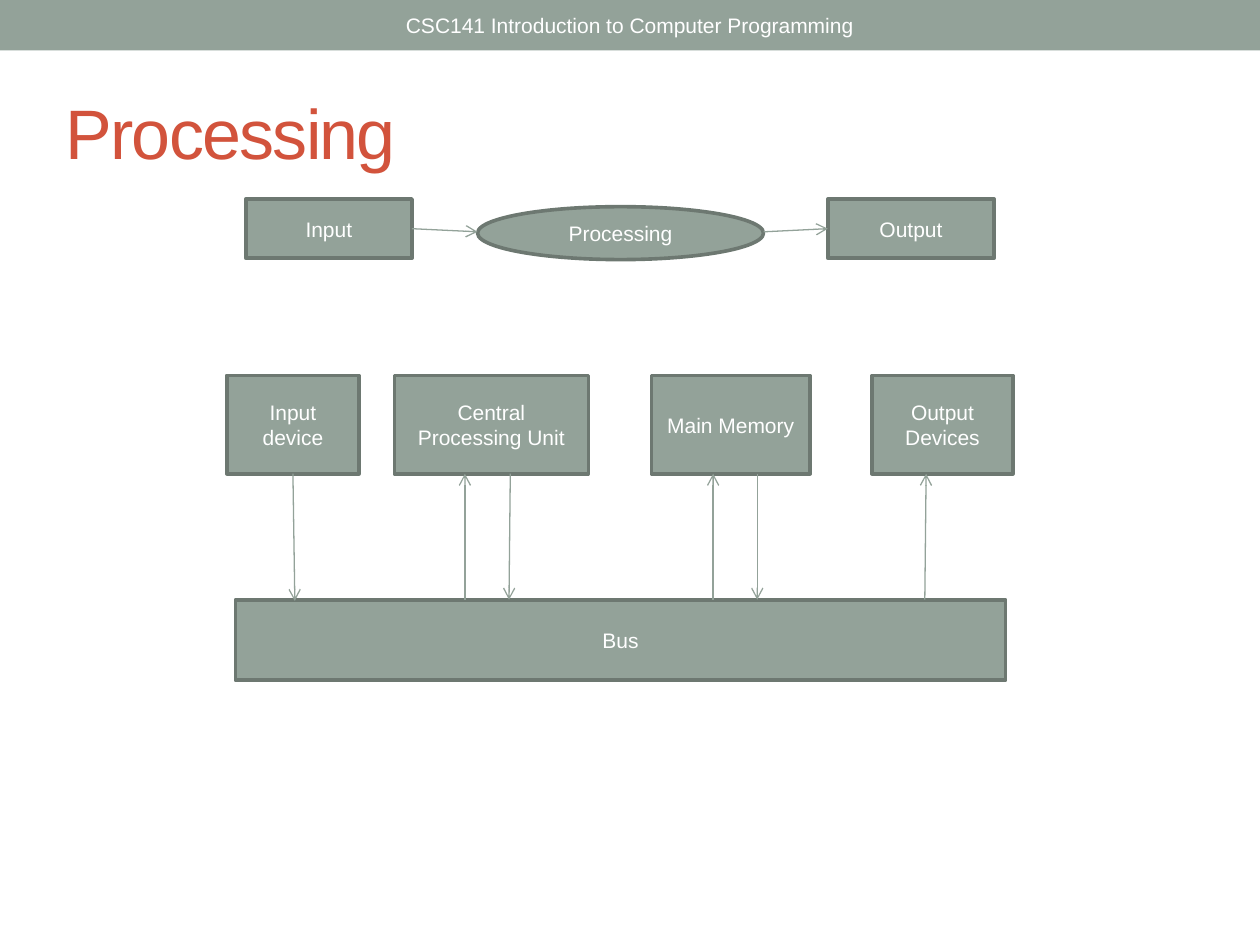
from dataclasses import dataclass
from typing import Optional

from lxml import etree
from pptx import Presentation, util as u
from pptx.dml.color import RGBColor
from pptx.enum import shapes as kinds, text as txt
from pptx.oxml import ns


@dataclass(frozen=True)
class Theme:
    font: str = "Arial"
    fill: str = "93A299"
    edge: str = "6D7871"
    title: str = "D2533C"
    light: str = "FFFFFF"
    head: int = 40
    body: int = 12
    rim: float = 2.08
    thin: float = 0.75


@dataclass(frozen=True)
class Node:
    label: str
    left: float
    top: float
    width: float
    height: float
    oval: bool = False


@dataclass(frozen=True)
class Arrow:
    start: tuple[float, float]
    end: tuple[float, float]
    source: Optional[tuple[str, int]] = None  # node label, side
    target: Optional[tuple[str, int]] = None


LOOK = Theme()
TOP, LEFT, BOTTOM, RIGHT = range(4)

# Flow from input to output
FLOW = [
    Node("Input", 1.95, 1.58, 1.32, 0.47),
    Node("Processing", 3.79, 1.64, 2.27, 0.42, oval=True),
    Node("Output", 6.57, 1.58, 1.32, 0.47),
]
FLOW_ARROWS = [
    Arrow((3.27, 1.82), (3.79, 1.84), source=("Input", RIGHT)),
    Arrow((6.06, 1.84), (6.57, 1.82), target=("Output", LEFT)),
]

# Hardware parts on a shared bus
UNIT_TOP, UNIT_HIGH, BUS_TOP = 2.98, 0.78, 4.76
UNIT_END = UNIT_TOP + UNIT_HIGH
UNITS = [
    Node(label, left, UNIT_TOP, width, UNIT_HIGH)
    for label, left, width in [
        ("Input device", 1.8, 1.05),
        ("Central Processing Unit", 3.13, 1.54),
        ("Main Memory", 5.17, 1.26),
        ("Output Devices", 6.92, 1.12),
    ]
]
BUS = Node("Bus", 1.87, BUS_TOP, 6.11, 0.64)
RISING = [(3.69, 3.69), (5.66, 5.66), (7.34, 7.35)]  # x at bus, x at unit
FALLING = [(4.05, 4.04), (6.01, 6.01)]  # x at unit, x at bus
BUS_ARROWS = [
    Arrow((2.32, UNIT_END), (2.34, BUS_TOP + 0.01), source=("Input device", BOTTOM)),
    *[Arrow((low, BUS_TOP), (high, UNIT_END)) for low, high in RISING],
    *[Arrow((high, UNIT_END), (low, BUS_TOP)) for high, low in FALLING],
]


def paint(shape, fill: str, edge: Optional[str] = None) -> None:
    shape.shadow.inherit = False
    shape.fill.solid()
    shape.fill.fore_color.rgb = RGBColor.from_string(fill)
    if edge:
        shape.line.color.rgb = RGBColor.from_string(edge)
        shape.line.width = u.Pt(LOOK.rim)
    else:
        shape.line.fill.background()


def write(shape, words: str, size: int, color: str, align):
    frame = shape.text_frame
    frame.word_wrap = True
    frame.auto_size = txt.MSO_AUTO_SIZE.NONE
    frame.vertical_anchor = txt.MSO_ANCHOR.MIDDLE
    para = frame.paragraphs[0]
    para.alignment = align
    run = para.add_run()
    run.text = words
    run.font.name = LOOK.font
    run.font.size = u.Pt(size)
    run.font.color.rgb = RGBColor.from_string(color)
    return run


def label(shape, words: str) -> None:
    write(shape, words, LOOK.body, LOOK.light, txt.PP_ALIGN.CENTER)


def add_node(group, node: Node):
    kind = kinds.MSO_SHAPE.OVAL if node.oval else kinds.MSO_SHAPE.RECTANGLE
    area = map(u.Inches, (node.left, node.top, node.width, node.height))
    shape = group.shapes.add_shape(kind, *area)
    paint(shape, LOOK.fill, LOOK.edge)
    label(shape, node.label)
    return shape


def add_arrow(group, arrow: Arrow, nodes: dict) -> None:
    ends = map(u.Inches, (*arrow.start, *arrow.end))
    line = group.shapes.add_connector(kinds.MSO_CONNECTOR.STRAIGHT, *ends)
    if arrow.source:
        name, side = arrow.source
        line.begin_connect(nodes[name], side)
    if arrow.target:
        name, side = arrow.target
        line.end_connect(nodes[name], side)
    line.line.color.rgb = RGBColor.from_string(LOOK.fill)
    line.line.width = u.Pt(LOOK.thin)
    tip = etree.SubElement(line.line._get_or_add_ln(), ns.qn("a:tailEnd"))
    tip.set("type", "arrow")
    etree.SubElement(line._element.spPr, ns.qn("a:effectLst"))


def add_chain(slide, nodes: list[Node], arrows: list[Arrow]) -> None:
    group = slide.shapes.add_group_shape()
    made = {node.label: add_node(group, node) for node in nodes}
    for arrow in arrows:
        add_arrow(group, arrow, made)


def main() -> None:
    deck = Presentation()
    deck.slide_width, deck.slide_height = u.Inches(10), u.Inches(7.5)
    slide = deck.slides.add_slide(deck.slide_layouts[5])

    # Header band with the course name
    band = slide.shapes.add_shape(
        kinds.MSO_SHAPE.RECTANGLE, 0, 0, deck.slide_width, u.Inches(0.4)
    )
    paint(band, LOOK.fill)
    label(band, "CSC141 Introduction to Computer Programming")

    # Title
    title = slide.shapes.title
    title.left, title.top = u.Inches(0.42), u.Inches(0.5)
    title.width, title.height = u.Inches(9), u.Inches(1.08)
    run = write(title, "Processing", LOOK.head, LOOK.title, txt.PP_ALIGN.LEFT)
    run.font._element.set("spc", "-100")

    # Diagrams
    add_chain(slide, FLOW, FLOW_ARROWS)
    add_chain(slide, [*UNITS, BUS], BUS_ARROWS)

    deck.save("out.pptx")


if __name__ == "__main__":
    main()
